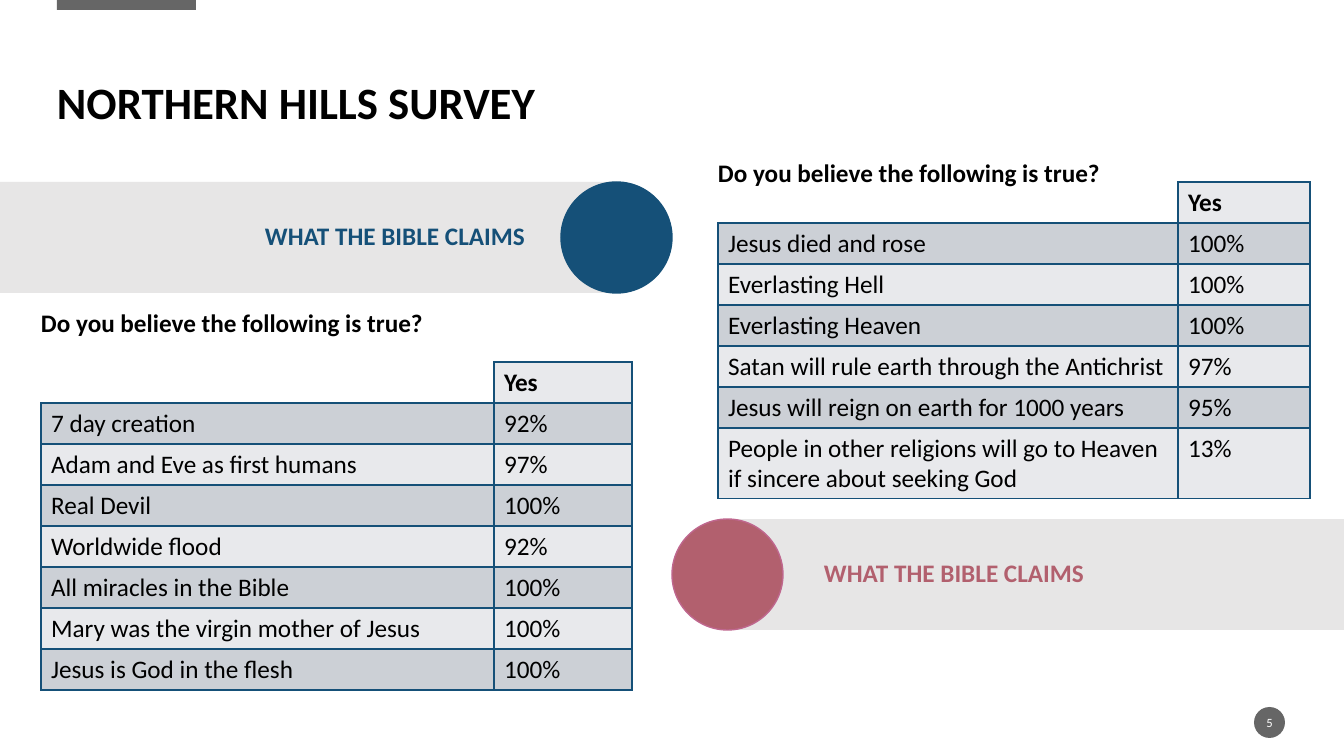
import pptx
import pptx.util
import pptx.dml.color
import pptx.enum.shapes
import pptx.enum.text
import pptx.oxml.ns
import lxml.etree

SCALE = 914400 / 100.8
FONT = "Calibri"
ROW = 41
HEX = {
    "black": "000000", "white": "FFFFFF", "band": "E7E6E6", "grey": "666666",
    "blue": "155078", "rose": "B2606E", "edge": "BF678E",
    "dark": "CCD0D6", "light": "E8E9EC",
}
SHAPE = pptx.enum.shapes.MSO_SHAPE
ALIGN = pptx.enum.text.PP_ALIGN
ANCHOR = pptx.enum.text.MSO_ANCHOR
CLAIMS = "WHAT THE BIBLE CLAIMS"
QUESTION = "Do you believe the following is true?"
LEFT = [
    ("7 day creation", "92%"),
    ("Adam and Eve as first humans", "97%"),
    ("Real Devil", "100%"),
    ("Worldwide flood", "92%"),
    ("All miracles in the Bible", "100%"),
    ("Mary was the virgin mother of Jesus", "100%"),
    ("Jesus is God in the flesh", "100%"),
]
RIGHT = [
    ("Jesus died and rose", "100%"),
    ("Everlasting Hell", "100%"),
    ("Everlasting Heaven", "100%"),
    ("Satan will rule earth through the Antichrist", "97%"),
    ("Jesus will reign on earth for 1000 years", "95%"),
    ("People in other religions will go to Heaven if sincere about seeking God", "13%"),
]


def px(*sizes):
    return [pptx.util.Emu(round(size * SCALE)) for size in sizes]


def paint(name):
    return pptx.dml.color.RGBColor.from_string(HEX[name])


def shape(slide, kind, box, fill, edge=None):
    item = slide.shapes.add_shape(kind, *px(*box))
    item.shadow.inherit = False
    item.fill.solid()
    item.fill.fore_color.rgb = paint(fill)
    if edge:
        item.line.color.rgb = paint(edge)
        item.line.width = pptx.util.Pt(1)
    else:
        item.line.fill.background()


def write(frame, text, size, tint, bold=False, align=ALIGN.LEFT):
    para = frame.paragraphs[0]
    para.alignment = align
    run = para.add_run()
    run.text = text
    run.font.name = FONT
    run.font.size = pptx.util.Pt(size)
    run.font.bold = bold
    run.font.color.rgb = paint(tint)
    return para


def label(slide, box, text, size, tint, bold=True, align=ALIGN.LEFT, anchor=ANCHOR.MIDDLE):
    frame = slide.shapes.add_textbox(*px(*box)).text_frame
    frame.word_wrap = True
    frame.vertical_anchor = anchor
    frame.margin_left = frame.margin_right = frame.margin_top = frame.margin_bottom = 0
    return write(frame, text, size, tint, bold, align)


def rule(cell, sides):
    """Draw the named sides of a cell and clear the others."""
    props = cell._tc.get_or_add_tcPr()
    name = pptx.oxml.ns.qn
    for side in "LRTB":
        line = lxml.etree.SubElement(props, name("a:ln" + side), w="12700")
        if side in sides:
            fill = lxml.etree.SubElement(line, name("a:solidFill"))
            lxml.etree.SubElement(fill, name("a:srgbClr"), val=HEX["blue"])
        else:
            lxml.etree.SubElement(line, name("a:noFill"))


def header(slide, box):
    x, y, w, h = box
    shape(slide, SHAPE.RECTANGLE, (x, y, 139, 10), "grey")
    title = label(slide, (x, y + 27, w, 102), "NORTHERN HILLS SURVEY", 32, "black",
                  anchor=ANCHOR.BOTTOM)
    title.line_spacing = 0.9


def band(slide, box, tint, edge, flip=False):
    """Grey strip with a disc at its inner end; flip puts the disc on the left."""
    x, y, w, h = box
    half = h // 2
    disc = x if flip else x + w - h
    shape(slide, SHAPE.RECTANGLE, (x + half if flip else x, y, w - half, h), "band")
    shape(slide, SHAPE.OVAL, (disc, y, h, h), tint, edge)
    start = disc + 152 if flip else disc - 416
    align = ALIGN.LEFT if flip else ALIGN.RIGHT
    para = label(slide, (start, y + 28, 380, 54), CLAIMS, 18, tint, align=align)
    para.line_spacing = 0.9
    para.space_before = pptx.util.Pt(10)


def survey(slide, box, split, lead, items):
    """Question with its table below; lead is the gap from question to table."""
    x, y, w, h = box
    label(slide, (x, y, 425, 30), QUESTION, 18, "black", anchor=ANCHOR.TOP)
    rows = [("", "Yes")] + items
    frame = slide.shapes.add_table(len(rows), 2, *px(x, y + lead, w, h - lead))
    table = frame.table
    table.first_row = table.horz_banding = False
    table.columns[0].width, table.columns[1].width = px(split, w - split)
    heights = [ROW] * (len(rows) - 1)
    heights.append(h - lead - sum(heights))
    for r, pair in enumerate(rows):
        table.rows[r].height = px(heights[r])[0]
        for c, text in enumerate(pair):
            cell = table.cell(r, c)
            rule(cell, "LRTB" if text else "RB")
            if text:
                cell.fill.solid()
                cell.fill.fore_color.rgb = paint("dark" if r % 2 else "light")
                write(cell.text_frame, text, 18, "black", r == 0)
            else:
                cell.fill.background()


def badge(slide, box, number):
    shape(slide, SHAPE.OVAL, box, "grey")
    label(slide, box, number, 9, "white", False, ALIGN.CENTER)


def main():
    deck = pptx.Presentation()
    deck.slide_width, deck.slide_height = px(1344, 756)
    slide = deck.slides.add_slide(deck.slide_layouts[6])
    header(slide, (57, 0, 1229, 129))
    band(slide, (0, 182, 672, 111), "blue", "blue")
    band(slide, (672, 519, 672, 111), "rose", "edge", flip=True)
    survey(slide, (41, 307, 591, 383), 453, 55, LEFT)
    survey(slide, (718, 157, 592, 341), 460, 25, RIGHT)
    badge(slide, (1254, 707, 31, 31), "5")
    deck.save("out.pptx")


if __name__ == "__main__":
    main()
